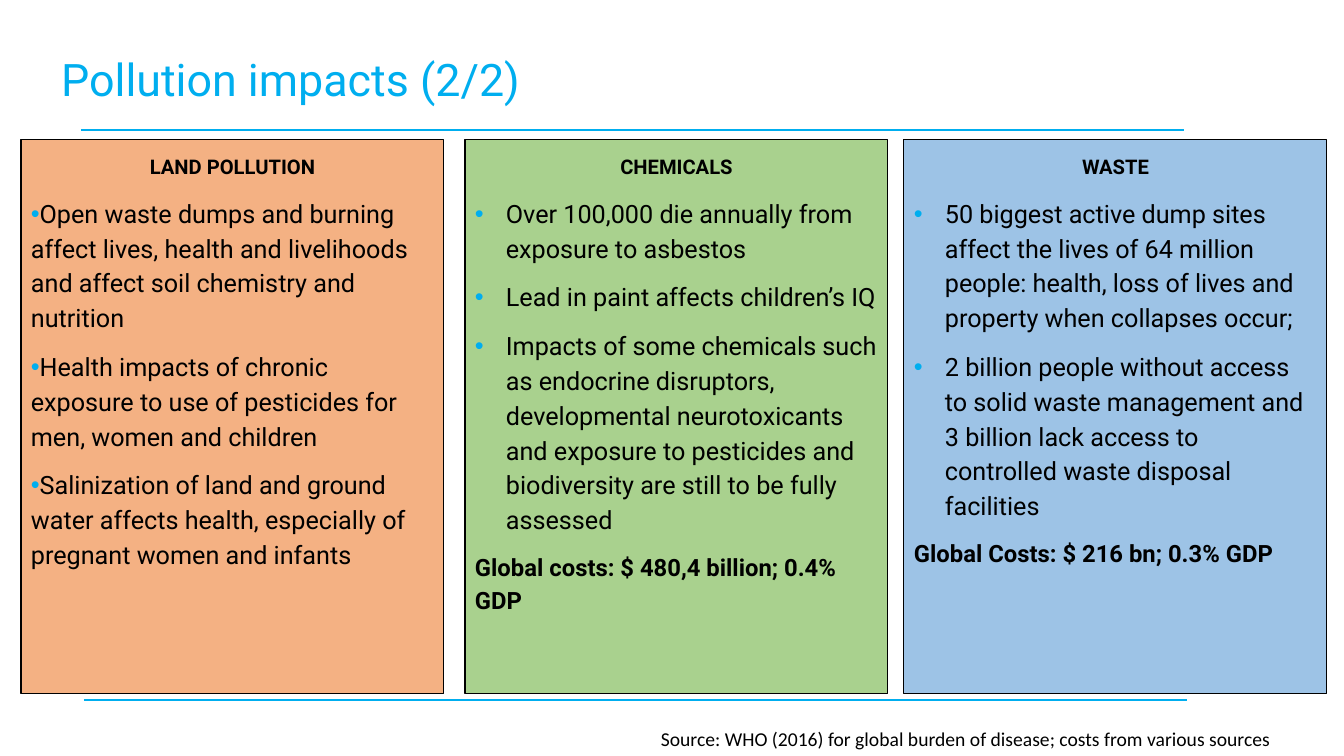
import pptx
import pptx.dml.color
import pptx.enum.shapes
import pptx.enum.text
import pptx.oxml.ns
import pptx.util
from lxml import etree

PX = 914400 / 100.8
COLORS = {"accent": "00AEEF", "text": "000000", "land": "F4B183",
          "chemicals": "A9D18E", "waste": "9DC3E6"}
ALIGN = pptx.enum.text.PP_ALIGN
COLUMN_TOP, COLUMN_WIDTH, COLUMN_HEIGHT = 140, 423, 554
# left, heading, fill, bullet margin and indent, bullets, closing line
COLUMNS = [
    (21, "land pollution", "land", 0, -25, [
        "Open waste dumps and burning affect lives, health and livelihoods "
        "and affect soil chemistry and nutrition",
        "Health impacts of chronic exposure to use of pesticides for men, "
        "women and children",
        "Salinization of land and ground water affects health, especially of "
        "pregnant women and infants"], None),
    (465, "chemicals", "chemicals", 31, -31, [
        "Over 100,000 die annually from exposure to asbestos",
        "Lead in paint affects children’s IQ",
        "Impacts of some chemicals such as endocrine disruptors, "
        "developmental neurotoxicants and exposure to pesticides and "
        "biodiversity are still to be fully assessed"],
     "Global costs: $ 480,4 billion; 0.4% GDP"),
    (904, "waste", "waste", 31, -31, [
        "50 biggest active dump sites affect the lives of 64 million people: "
        "health, loss of lives and property when collapses occur;",
        "2 billion people without access to solid waste management and "
        "3 billion lack access to controlled waste disposal facilities"],
     "Global Costs: $ 216 bn; 0.3% GDP"),
]


def px(n):
    return pptx.util.Emu(round(n * PX))


def rgb(name):
    return pptx.dml.color.RGBColor.from_string(COLORS[name])


def add_run(p, text, size, color="text", font="Roboto", bold=False):
    r = p.add_run()
    r.text = text
    r.font.size = pptx.util.Pt(size)
    r.font.name = font
    r.font.bold = bold
    r.font.color.rgb = rgb(color)
    return r


def add_bullet(p, margin, indent):
    pPr = p._p.get_or_add_pPr()
    pPr.set("marL", str(px(margin)))
    pPr.set("indent", str(px(indent)))
    qn = pptx.oxml.ns.qn
    color = etree.SubElement(pPr, qn("a:buClr"))
    etree.SubElement(color, qn("a:srgbClr"), val=COLORS["accent"])
    etree.SubElement(pPr, qn("a:buFont"), typeface="Arial")
    etree.SubElement(pPr, qn("a:buChar"), char="•")


def add_rule(s, x, y, w):
    line = s.shapes.add_connector(
        pptx.enum.shapes.MSO_CONNECTOR.STRAIGHT, px(x), px(y), px(x + w), px(y))
    line.line.color.rgb = rgb("accent")
    line.line.width = pptx.util.Pt(1)
    etree.SubElement(line._element.spPr, pptx.oxml.ns.qn("a:effectLst"))


def add_title(s, x, y, w, h):
    sp = s.shapes.title
    sp.left, sp.top, sp.width, sp.height = px(x), px(y), px(w), px(h)
    tf = sp.text_frame
    tf.vertical_anchor = pptx.enum.text.MSO_ANCHOR.MIDDLE
    p = tf.paragraphs[0]
    p.alignment = ALIGN.LEFT
    p.line_spacing = 0.9
    add_run(p, "Pollution impacts (2/2)", 32, "accent")


def add_column(s, x, y, w, h, heading, fill, margin, indent, bullets, cost):
    sp = s.shapes.add_shape(pptx.enum.shapes.MSO_SHAPE.RECTANGLE,
                            px(x), px(y), px(w), px(h))
    sp.shadow.inherit = False
    sp.fill.solid()
    sp.fill.fore_color.rgb = rgb(fill)
    sp.line.color.rgb = rgb("text")
    sp.line.width = pptx.util.Pt(0.75)
    tf = sp.text_frame
    tf.word_wrap = True
    tf.vertical_anchor = pptx.enum.text.MSO_ANCHOR.TOP

    def add_paragraph(alignment=ALIGN.LEFT):
        p = tf.add_paragraph() if tf.text else tf.paragraphs[0]
        p.alignment = alignment
        p.line_spacing = 1.15
        p.space_after = pptx.util.Pt(10)
        return p

    r = add_run(add_paragraph(ALIGN.CENTER), heading, 18, bold=True)
    r.font._element.set("cap", "small")
    for text in bullets:
        p = add_paragraph()
        add_bullet(p, margin, indent)
        add_run(p, text, 18)
    if cost:
        add_run(add_paragraph(), cost, 17, bold=True)


def add_source(s, x, y, w, h):
    tf = s.shapes.add_textbox(px(x), px(y), px(w), px(h)).text_frame
    tf.word_wrap = False
    tf.auto_size = pptx.enum.text.MSO_AUTO_SIZE.SHAPE_TO_FIT_TEXT
    add_run(tf.paragraphs[0], "Source: WHO (2016) for global burden of disease; "
            "costs from various sources", 14, font="Calibri")


def main():
    prs = pptx.Presentation()
    prs.slide_width, prs.slide_height = px(1344), px(756)
    s = prs.slides.add_slide(prs.slide_layouts[5])
    add_rule(s, 81, 130, 1103)
    add_rule(s, 84, 700, 1103)
    add_title(s, 51, 40, 1201, 84)
    for left, *content in COLUMNS:
        add_column(s, left, COLUMN_TOP, COLUMN_WIDTH, COLUMN_HEIGHT, *content)
    add_source(s, 651, 722, 631, 34)
    prs.save("out.pptx")


if __name__ == "__main__":
    main()
